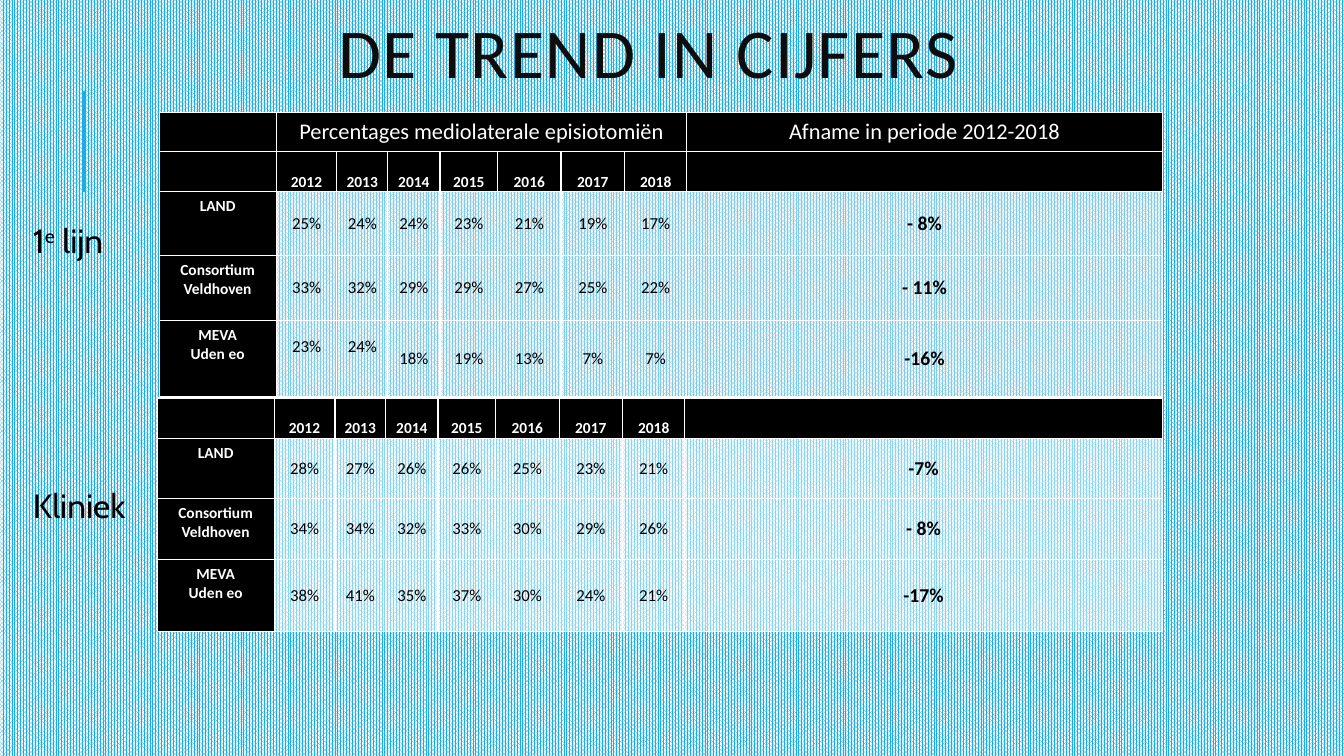
from dataclasses import dataclass

from lxml.etree import SubElement
from pptx import Presentation
from pptx.dml.color import RGBColor
from pptx.enum.dml import MSO_PATTERN
from pptx.enum.shapes import MSO_CONNECTOR
from pptx.enum.text import MSO_ANCHOR, PP_ALIGN
from pptx.oxml import parse_xml
from pptx.oxml.ns import nsdecls, qn
from pptx.util import Cm, Pt

TITLE = "DE TREND IN CIJFERS"
GROUPS = ("Percentages mediolaterale episiotomiën", "Afname in periode 2012-2018")
YEARS = [str(year) for year in range(2012, 2019)]
REGIONS = ("LAND", "Consortium\nVeldhoven", "MEVA\nUden eo")

FIRST_LINE = {
    "left": 4.01, "top": 2.84, "grouped": True, "fill": ("F2F2F2", 46),
    "heights": (0.94, 1.01, 1.61, 1.64, 1.93),
    "percentages": [(25, 24, 24, 23, 21, 19, 17),
                    (33, 32, 29, 29, 27, 25, 22),
                    (23, 24, 18, 19, 13, 7, 7)],
    "changes": ("- 8%", "- 11%", "-16%"),
    "raised": [(4, 1), (4, 2)],
}
CLINIC = {
    "left": 3.96, "top": 10.03, "grouped": False, "fill": ("FFFFFF", 49),
    "heights": (1.01, 1.53, 1.53, 1.81),
    "percentages": [(28, 27, 26, 26, 25, 23, 21),
                    (34, 34, 32, 33, 30, 29, 26),
                    (38, 41, 35, 37, 30, 24, 21)],
    "changes": ("-7%", "- 8%", "-17%"),
    "raised": [],
}
# Each caption: top, height, and (text, baseline shift) parts
CAPTIONS = [(3.86, 2.82, [("1", 0), ("e", 30000), (" lijn", 0)]),
            (9.78, 3.58, [("Kliniek", 0)])]

WIDTHS = (2.95, 1.53, 1.28, 1.32, 1.45, 1.6, 1.6, 1.57)
TABLE_RIGHT = 29.29
RAISED_MARGIN = 0.6


@dataclass(frozen=True)
class Theme:
    accent: str = "1CADE4"
    white: str = "FFFFFF"
    black: str = "000000"
    title: str = "0D0D0D"
    table_font: str = "Calibri"
    caption_font: str = "Cabin"
    title_size: int = 50
    caption_size: int = 24


THEME = Theme()
MIDDLE, TOP, BOTTOM = MSO_ANCHOR.MIDDLE, MSO_ANCHOR.TOP, MSO_ANCHOR.BOTTOM
# Each kind of cell: size, bold, text colour, anchor, margin
CELL_KINDS = {
    "group": (16, False, THEME.white, MIDDLE, 0.1),
    "year": (11, True, THEME.white, BOTTOM, 0),
    "region": (11, True, THEME.white, TOP, 0.13),
    "value": (12, False, THEME.black, MIDDLE, 0),
    "change": (14, True, THEME.black, MIDDLE, 0),
}


def color(code):
    return RGBColor.from_string(code)


def set_all(target, values):
    for name, value in values.items():
        setattr(target, name, value)


def format_span(span, name, size, code, bold=False):
    set_all(span.font, {"name": name, "size": Pt(size), "bold": bold})
    span.font.color.rgb = color(code)


def fill_cell(cell, code, opacity=100):
    """Fill a cell, then put white hairlines on its four sides."""
    cell.fill.solid()
    cell.fill.fore_color.rgb = color(code)
    properties = cell._tc.get_or_add_tcPr()
    if opacity < 100:
        paint = properties.find(".//" + qn("a:srgbClr"))
        SubElement(paint, qn("a:alpha"), val=str(opacity * 1000))
    for position, side in enumerate("LRTB"):
        properties.insert(position, parse_xml(
            f'<a:ln{side} {nsdecls("a")} w="12700"><a:solidFill>'
            f'<a:srgbClr val="{THEME.white}"/></a:solidFill></a:ln{side}>'))


def write_cell(cell, text, kind):
    size, bold, code, anchor, margin = CELL_KINDS[kind]
    set_all(cell, {"vertical_anchor": anchor, "margin_left": 0, "margin_right": 0,
                   "margin_top": Cm(margin), "margin_bottom": Cm(margin)})
    cell.text = text
    for para in cell.text_frame.paragraphs:
        para.alignment = PP_ALIGN.CENTER
        for span in para.runs:
            format_span(span, THEME.table_font, size, code, bold)


def table_rows(data):
    """List the rows as (text, kind) cells, header rows first."""
    rows = []
    if data["grouped"]:
        blanks = [("", "group")] * (len(YEARS) - 1)
        rows.append([("", "group"), (GROUPS[0], "group"), *blanks, (GROUPS[1], "group")])
    rows.append([("", "year"), *((year, "year") for year in YEARS), ("", "year")])
    for region, shares, change in zip(REGIONS, data["percentages"], data["changes"]):
        values = [(f"{share}%", "value") for share in shares]
        rows.append([(region, "region"), *values, (change, "change")])
    return rows


def add_trend_table(page, data):
    rows = table_rows(data)
    widths = (*WIDTHS, TABLE_RIGHT - data["left"] - sum(WIDTHS))
    table = page.shapes.add_table(
        len(rows), len(widths), Cm(data["left"]), Cm(data["top"]),
        Cm(sum(widths)), Cm(sum(data["heights"]))).table
    set_all(table, {"first_row": False, "horz_banding": False})
    for column, width in zip(table.columns, widths):
        column.width = Cm(width)
    for row, height in zip(table.rows, data["heights"]):
        row.height = Cm(height)
    for row_index, row in enumerate(rows):
        for column_index, (text, kind) in enumerate(row):
            cell = table.cell(row_index, column_index)
            write_cell(cell, text, kind)
            if kind in ("value", "change"):
                fill_cell(cell, *data["fill"])
            else:
                fill_cell(cell, THEME.black)
    if data["grouped"]:
        table.cell(0, 1).merge(table.cell(0, len(YEARS)))
    for position in data["raised"]:
        table.cell(*position).margin_bottom = Cm(RAISED_MARGIN)


def add_title(page):
    title = page.shapes.title
    set_all(title, {"left": Cm(2.84), "top": Cm(0), "width": Cm(27), "height": Cm(2.92)})
    title.text_frame.vertical_anchor = MIDDLE
    para = title.text_frame.paragraphs[0]
    set_all(para, {"alignment": PP_ALIGN.CENTER, "line_spacing": 0.8})
    span = para.add_run()
    span.text = TITLE
    format_span(span, THEME.table_font, THEME.title_size, THEME.title)
    span.font._element.set("spc", "100")


def add_caption(page, top, height, parts):
    box = page.shapes.add_textbox(Cm(0.58), Cm(top), Cm(3.05), Cm(height))
    set_all(box.text_frame, {"word_wrap": True, "vertical_anchor": BOTTOM})
    para = box.text_frame.paragraphs[0]
    for text, baseline in parts:
        span = para.add_run()
        span.text = text
        format_span(span, THEME.caption_font, THEME.caption_size, THEME.black)
        if baseline:
            span.font._element.set("baseline", str(baseline))


def add_accent_line(page):
    line = page.shapes.add_connector(
        MSO_CONNECTOR.STRAIGHT, Cm(2.11), Cm(4.83), Cm(2.11), Cm(2.29))
    line.line.color.rgb = color(THEME.accent)
    line.line.width = Pt(1.5)
    SubElement(line._element.spPr, qn("a:effectLst"))


def main():
    deck = Presentation()
    set_all(deck, {"slide_width": Cm(33.87), "slide_height": Cm(19.05)})
    page = deck.slides.add_slide(deck.slide_layouts[5])
    backdrop = page.background.fill
    backdrop.patterned()
    backdrop.pattern = MSO_PATTERN.PERCENT_80
    backdrop.fore_color.rgb = color(THEME.accent)
    backdrop.back_color.rgb = color(THEME.white)
    add_accent_line(page)
    add_title(page)
    for data in (FIRST_LINE, CLINIC):
        add_trend_table(page, data)
    for caption in CAPTIONS:
        add_caption(page, *caption)
    deck.save("out.pptx")


if __name__ == "__main__":
    main()
